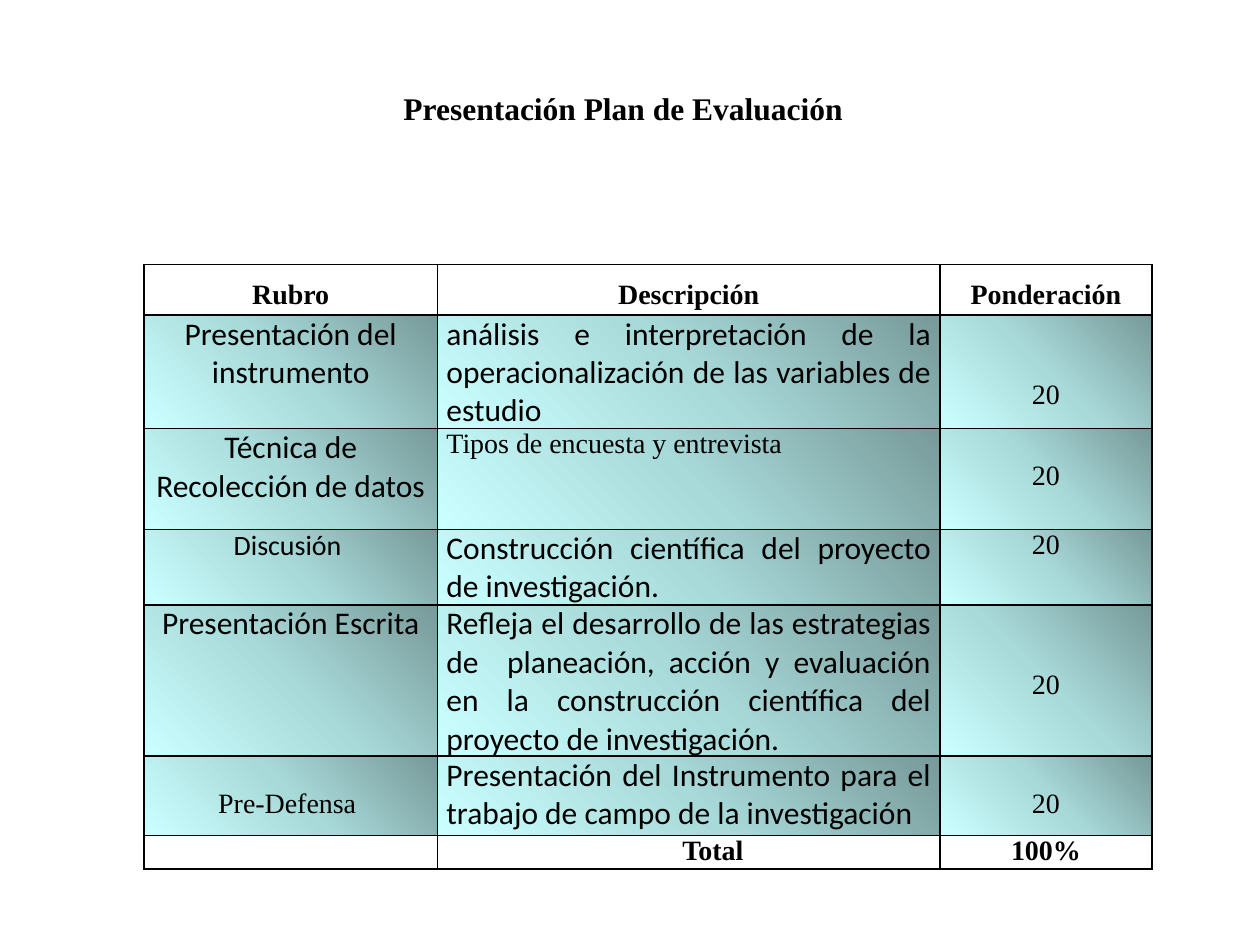
"""Build the evaluation plan slide: a title and a table of weighted items."""
from dataclasses import dataclass

from lxml import etree
from pptx import Presentation
from pptx.dml.color import RGBColor
from pptx.enum.text import PP_ALIGN
from pptx.oxml import parse_xml
from pptx.util import Cm, Pt

CENTER, JUSTIFY = PP_ALIGN.CENTER, PP_ALIGN.JUSTIFY
NS = "http://schemas.openxmlformats.org/drawingml/2006/main"


@dataclass(frozen=True)
class Theme:
    ink: str = "000000"
    gradient: tuple = ((0, "779999"), (50, "A9DADA"), (100, "CCFFFF"))
    serif: str = "Times New Roman"
    sans: str = "Calibri"
    large: int = 18
    small: int = 16
    border: int = 12700


T = Theme()


def write(tf, text, font=T.serif, size=T.small, bold=False, align=CENTER, spacing=None):
    """Put one formatted paragraph in a text frame."""
    p = tf.paragraphs[0]
    p.alignment = align
    p.line_spacing = spacing
    if not text:
        etree.SubElement(p._p, f"{{{NS}}}endParaRPr", sz=str(size * 100))
        return
    r = p.add_run()
    r.text = text
    r.font.name, r.font.size, r.font.bold = font, Pt(size), bold
    r.font.color.rgb = RGBColor.from_string(T.ink)


def paint(cell, graded):
    """Draw the four borders of a cell, then its fill."""
    tc_pr = cell._tc.get_or_add_tcPr()
    for side in "LRTB":
        tc_pr.append(parse_xml(
            f'<a:ln{side} xmlns:a="{NS}" w="{T.border}"><a:solidFill>'
            f'<a:srgbClr val="{T.ink}"/></a:solidFill></a:ln{side}>'))
    if graded:
        stops = "".join(f'<a:gs pos="{pos * 1000}"><a:srgbClr val="{color}"/></a:gs>'
                        for pos, color in T.gradient)
        tc_pr.append(parse_xml(
            f'<a:gradFill xmlns:a="{NS}" rotWithShape="1"><a:gsLst>{stops}</a:gsLst>'
            '<a:lin ang="8100000" scaled="0"/></a:gradFill>'))
    else:
        cell.fill.background()


SANS = dict(font=T.sans, size=T.large)
BODY = dict(SANS, align=JUSTIFY)
HEAD = dict(bold=True, spacing=1.5)
BOLD = dict(bold=True)
LINE = 0.65

rows = [
    (1.02, [("Rubro", HEAD, 0), ("Descripción", HEAD, 0), ("Ponderación", HEAD, 0)]),
    (2.29, [("Presentación del instrumento", SANS, 0),
            ("análisis e interpretación de la operacionalización de las variables de estudio",
             BODY, 0),
            ("20", {}, 2)]),
    (2.03, [("Técnica de Recolección de datos", SANS, 0),
            ("Tipos de encuesta y entrevista", dict(align=JUSTIFY), 0),
            ("20", {}, 1)]),
    (1.52, [("Discusión ", dict(font=T.sans), 0),
            ("Construcción científica del proyecto de investigación.", BODY, 0),
            ("20", {}, 0)]),
    (3.05, [("Presentación Escrita", SANS, 0),
            ("Refleja el desarrollo de las estrategias de  planeación, acción y evaluación "
             "en la construcción científica del proyecto de investigación.", BODY, 0),
            ("20", {}, 2)]),
    (1.6, [("Pre-Defensa ", {}, 1),
           ("Presentación del Instrumento para el trabajo de campo de la investigación",
            BODY, 0),
           ("20", {}, 1)]),
    (0.67, [("", {}, 0), ("Total", BOLD, 0), ("100%", BOLD, 0)]),
]
widths = [5.92, 10.13, 4.27]

prs = Presentation()
prs.slide_width, prs.slide_height = Cm(25.4), Cm(19.05)
s = prs.slides.add_slide(prs.slide_layouts[6])

tf = s.shapes.add_textbox(Cm(7.7), Cm(1.68), Cm(9.73), Cm(1.02)).text_frame
tf.word_wrap = True
write(tf, "Presentación Plan de Evaluación", size=T.large, bold=True)

table = s.shapes.add_table(len(rows), len(widths), Cm(2.9), Cm(5.33), Cm(sum(widths)),
                           Cm(sum(height for height, _ in rows))).table
table.first_row = table.horz_banding = False
for column, width in zip(table.columns, widths):
    column.width = Cm(width)

for i, (height, cells) in enumerate(rows):
    table.rows[i].height = Cm(height)
    for j, (text, style, blank_lines) in enumerate(cells):
        cell = table.cell(i, j)
        cell.margin_left = cell.margin_right = Cm(0.18)
        cell.margin_top, cell.margin_bottom = Cm(blank_lines * LINE), Cm(0)
        write(cell.text_frame, text, **style)
        paint(cell, graded=0 < i < len(rows) - 1)

table.cell(len(rows) - 1, 1).margin_left = Cm(1.15)

prs.save("out.pptx")
